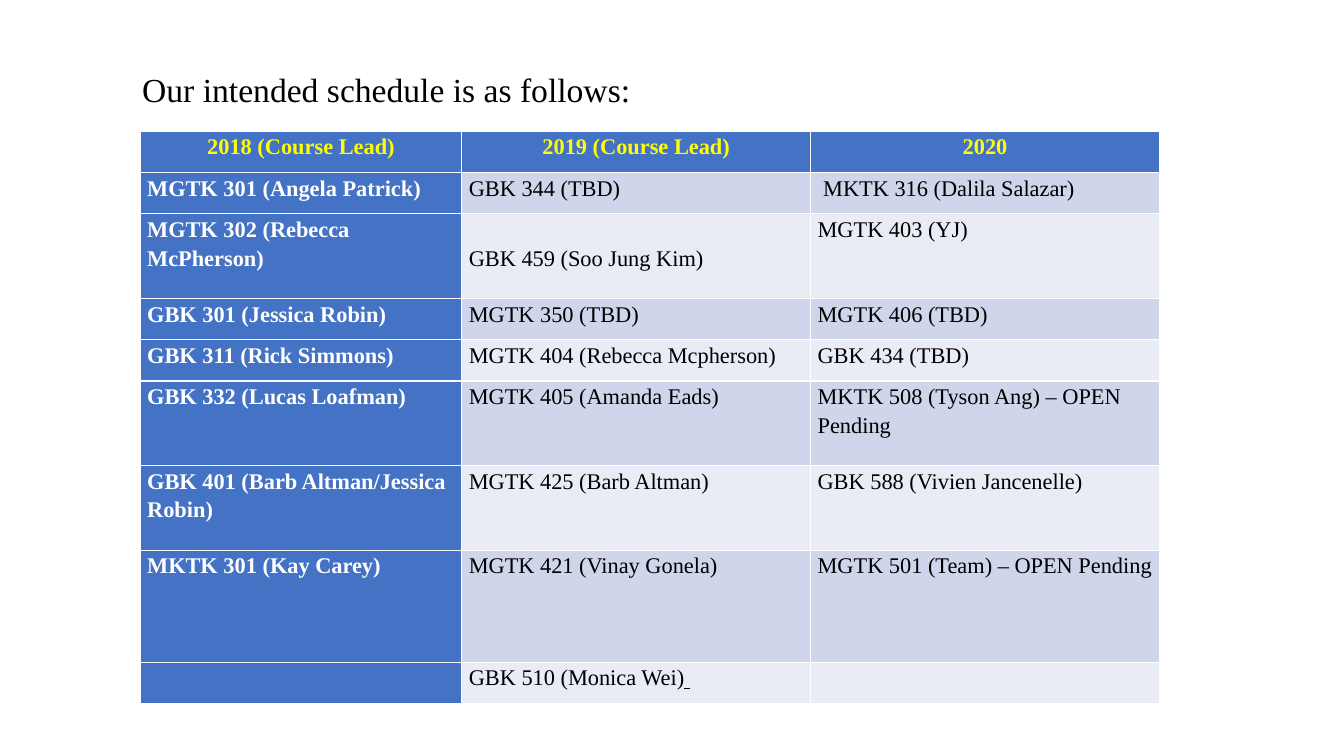
from dataclasses import dataclass

from pptx import Presentation
from pptx.dml.color import RGBColor
from pptx.enum.text import MSO_ANCHOR, PP_ALIGN
from pptx.util import Inches, Pt

TOP = MSO_ANCHOR.TOP
LEFT, CENTER = PP_ALIGN.LEFT, PP_ALIGN.CENTER

BLACK = RGBColor(0x00, 0x00, 0x00)
WHITE = RGBColor(0xFF, 0xFF, 0xFF)
YELLOW = RGBColor(0xFF, 0xFF, 0x00)
BLUE = RGBColor(0x44, 0x72, 0xC4)
BAND_DARK = RGBColor(0xCF, 0xD5, 0xEA)
BAND_LIGHT = RGBColor(0xE9, 0xEB, 0xF5)

FONT = "Times New Roman"
UNIT = 0.1  # one grid step, in inches
COLUMNS = (31.9, 34.6, 34.6)
SINGLE, DOUBLE, TALL = 4.1, 8.4, 11.1  # row heights in grid steps


@dataclass(frozen=True)
class ScheduleRow:
    height: float
    courses: tuple[str, str, str]


@dataclass(frozen=True)
class CellStyle:
    fill: RGBColor
    color: RGBColor
    bold: bool = False
    align: PP_ALIGN = LEFT


HEADER = CellStyle(BLUE, YELLOW, True, CENTER)
FIRST_COLUMN = CellStyle(BLUE, WHITE, True)
BANDS = (CellStyle(BAND_LIGHT, BLACK), CellStyle(BAND_DARK, BLACK))

SCHEDULE = (
    ScheduleRow(SINGLE, ("2018 (Course Lead)", "2019 (Course Lead)", "2020")),
    ScheduleRow(SINGLE, ("MGTK 301 (Angela Patrick)", "GBK 344 (TBD)",
                         " MKTK 316 (Dalila Salazar)")),
    ScheduleRow(DOUBLE, ("MGTK 302 (Rebecca McPherson)", "GBK 459 (Soo Jung Kim)",
                         "MGTK 403 (YJ)")),
    ScheduleRow(SINGLE, ("GBK 301 (Jessica Robin)", "MGTK 350 (TBD)", "MGTK 406 (TBD)")),
    ScheduleRow(SINGLE, ("GBK 311 (Rick Simmons)", "MGTK 404 (Rebecca Mcpherson)",
                         "GBK 434 (TBD)")),
    ScheduleRow(DOUBLE, ("GBK 332 (Lucas Loafman)", "MGTK 405 (Amanda Eads)",
                         "MKTK 508 (Tyson Ang) – OPEN Pending")),
    ScheduleRow(DOUBLE, ("GBK 401 (Barb Altman/Jessica Robin)", "MGTK 425 (Barb Altman)",
                         "GBK 588 (Vivien Jancenelle)")),
    ScheduleRow(TALL, ("MKTK 301 (Kay Carey)", "MGTK 421 (Vinay Gonela)",
                       "MGTK 501 (Team) – OPEN Pending")),
    ScheduleRow(SINGLE, ("", "GBK 510 (Monica Wei)", "")),
)
LOWERED = (2, 1)  # this course sits one line lower in its cell
UNDERLINED_END = (8, 1)  # this course ends in an underlined space


def grid(steps: float) -> int:
    return Inches(steps * UNIT)


def format_run(r, size: float, color: RGBColor, bold: bool = False) -> None:
    r.font.name = FONT
    r.font.size = Pt(size)
    r.font.bold = bold
    r.font.color.rgb = color


def style_for(row: int, col: int) -> CellStyle:
    if row == 0:
        return HEADER
    return FIRST_COLUMN if col == 0 else BANDS[row % 2]


def fill_cell(cell, text: str, row: int, col: int) -> None:
    style = style_for(row, col)
    cell.fill.solid()
    cell.fill.fore_color.rgb = style.fill
    cell.margin_left = cell.margin_right = grid(0.7)
    cell.margin_top = grid(2.9) if (row, col) == LOWERED else 0
    cell.margin_bottom = 0
    cell.vertical_anchor = TOP
    cell.text_frame.text = text
    p = cell.text_frame.paragraphs[0]
    p.alignment = style.align
    p.line_spacing = 1.15
    if (row, col) == UNDERLINED_END:
        r = p.add_run()
        r.text = " "
        r.font.underline = True
    for r in p.runs:
        format_run(r, 16, style.color, style.bold)


def add_title(s) -> None:
    title = s.shapes.title
    title.left, title.top = grid(13.1), grid(6.8)
    title.width, title.height = grid(92.4), grid(8.5)
    tf = title.text_frame
    tf.text = "Our intended schedule is as follows:"
    tf.vertical_anchor = TOP
    p = tf.paragraphs[0]
    p.alignment = LEFT
    p.line_spacing = 0.9
    format_run(p.runs[0], 24, BLACK)


def add_schedule(s) -> None:
    height = sum(row.height for row in SCHEDULE)
    table = s.shapes.add_table(len(SCHEDULE), len(COLUMNS), grid(13.9), grid(13),
                               grid(sum(COLUMNS)), grid(height)).table
    table.first_col = True
    for column, width in zip(table.columns, COLUMNS):
        column.width = grid(width)
    for i, row in enumerate(SCHEDULE):
        table.rows[i].height = grid(row.height)
        for j, course in enumerate(row.courses):
            fill_cell(table.cell(i, j), course, i, j)


def main() -> None:
    prs = Presentation()
    prs.slide_width, prs.slide_height = Inches(13.33), Inches(7.5)
    s = prs.slides.add_slide(prs.slide_layouts.get_by_name("Title Only"))
    add_title(s)
    add_schedule(s)
    prs.save("out.pptx")


if __name__ == "__main__":
    main()
